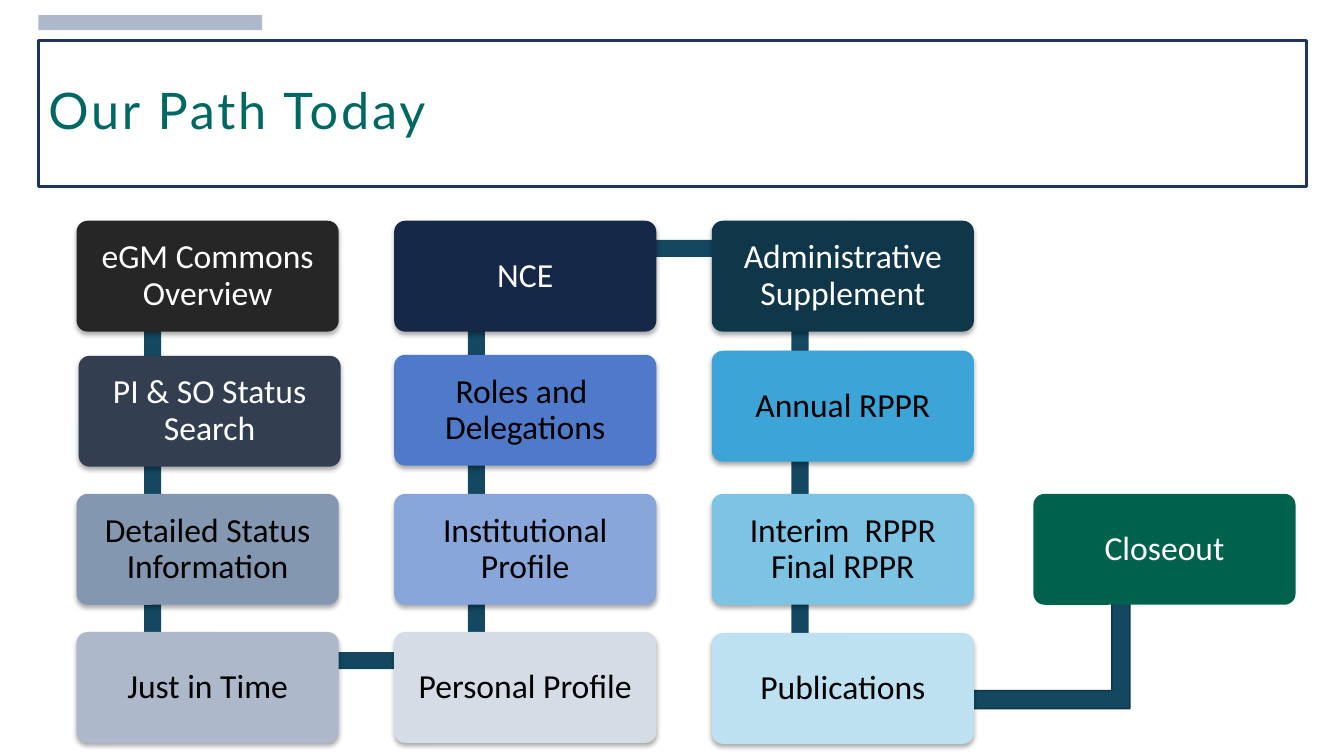
"""Build the "Our Path Today" slide: a stepped route through grant topics."""
from dataclasses import dataclass

from lxml import etree
from pptx import Presentation
from pptx import util as u
from pptx.dml.color import RGBColor
from pptx.enum import shapes, text
from pptx.oxml.ns import qn


@dataclass(frozen=True)
class Theme:
    title_font: str = "Lato"
    step_font: str = "Calibri"
    title_size: int = 36
    step_size: int = 24
    title_text: str = "006863"
    title_border: str = "1D3560"
    accent: str = "ADB9CA"
    route: str = "144861"
    route_edge: str = "0F3548"
    light: str = "FFFFFF"
    dark: str = "000000"


@dataclass(frozen=True)
class Box:
    left: float
    top: float
    width: float
    height: float

    def lengths(self) -> list[u.Length]:
        return [u.Inches(v) for v in (self.left, self.top, self.width, self.height)]


@dataclass(frozen=True)
class Step:
    lines: tuple[str, ...]
    left: float
    top: float
    fill: str
    ink: str
    raised: bool = True


THEME = Theme()
STEP_WIDTH, STEP_HEIGHT, STEP_INSET = 2.6, 1.1, 0.13
BAR = 0.17
COLUMNS = (0.76, 3.91, 7.06, 10.25)
ROWS = (2.19, 3.52, 4.9, 6.27)

STEPS = (
    Step(("eGM Commons Overview",), COLUMNS[0], ROWS[0], "262626", THEME.light),
    Step(("PI & SO Status Search",), 0.78, 3.53, "333F50", THEME.light),
    Step(("Detailed Status Information",), COLUMNS[0], ROWS[2], "8497B0", THEME.dark),
    Step(("Just in Time",), COLUMNS[0], ROWS[3], "ADB9CA", THEME.dark),
    Step(("Personal Profile",), COLUMNS[1], ROWS[3], "D6DCE5", THEME.dark),
    Step(("Institutional Profile",), COLUMNS[1], ROWS[2], "89A6DB", THEME.dark),
    Step(("Roles and ", "Delegations"), COLUMNS[1], ROWS[1], "4E7AC9", THEME.dark),
    Step(("NCE",), COLUMNS[1], ROWS[0], "162848", THEME.light),
    Step(("Administrative Supplement",), COLUMNS[2], ROWS[0], "0F3649", THEME.light),
    Step(("Annual RPPR",), COLUMNS[2], 3.48, "3CA4D7", THEME.dark),
    Step(("Interim  RPPR Final RPPR",), COLUMNS[2], ROWS[2], "7DC3E4", THEME.dark),
    Step(("Publications",), COLUMNS[2], 6.28, "BEE1F2", THEME.dark),
    Step(("Closeout",), COLUMNS[3], ROWS[2], "00624C", THEME.light, raised=False),
)

UPRIGHTS = tuple(
    Box(1.43 + 3.21 * column, top, BAR, height)
    for column in range(3)
    for top, height in ((2.46, 1.33), (3.8, 1.37), (5.18, 1.37))
)
CROSSINGS = (Box(1.52, 6.47, 3.2, BAR), Box(4.73, 2.38, 3.2, BAR))


def colour(value: str) -> RGBColor:
    return RGBColor.from_string(value)


def add_solid(slide, preset, box: Box, fill: str):
    solid = slide.shapes.add_shape(preset, *box.lengths())
    solid.shadow.inherit = False
    solid.fill.solid()
    solid.fill.fore_color.rgb = colour(fill)
    solid.line.fill.background()
    return solid


def add_run(paragraph, words: str, font: str, size: int, ink: str):
    run = paragraph.add_run()
    run.text = words
    run.font.name = font
    run.font.size = u.Pt(size)
    run.font.color.rgb = colour(ink)
    return run


def raise_card(card) -> None:
    effects = card._element.spPr.find(qn("a:effectLst"))
    shadow = etree.SubElement(
        effects, qn("a:outerShdw"), blurRad=str(u.Pt(3.5)), dist=str(u.Pt(2.2)),
        dir="5400000", algn="ctr", rotWithShape="0")
    tint = etree.SubElement(shadow, qn("a:srgbClr"), val=THEME.dark)
    etree.SubElement(tint, qn("a:alpha"), val="32000")


def add_step(slide, step: Step) -> None:
    box = Box(step.left, step.top, STEP_WIDTH, STEP_HEIGHT)
    card = add_solid(slide, shapes.MSO_SHAPE.ROUNDED_RECTANGLE, box, step.fill)
    card.adjustments[0] = 0.1
    if step.raised:
        raise_card(card)
    frame = card.text_frame
    frame.word_wrap = True
    frame.vertical_anchor = text.MSO_ANCHOR.MIDDLE
    frame.margin_left = frame.margin_right = u.Inches(STEP_INSET)
    frame.margin_top = frame.margin_bottom = u.Inches(STEP_INSET)
    label = frame.paragraphs[0]
    label.alignment = text.PP_ALIGN.CENTER
    label.line_spacing = 0.9
    for index, line in enumerate(step.lines):
        if index:
            label.add_line_break()
        add_run(label, line, THEME.step_font, THEME.step_size, step.ink)


def add_title(slide) -> None:
    title = slide.shapes.title
    title.left, title.top, title.width, title.height = Box(0.38, 0.4, 12.58, 1.45).lengths()
    title.line.color.rgb = colour(THEME.title_border)
    title.line.width = u.Pt(2)
    title.text_frame.vertical_anchor = text.MSO_ANCHOR.MIDDLE
    heading = title.text_frame.paragraphs[0]
    heading.alignment = text.PP_ALIGN.LEFT
    heading.line_spacing = 0.9
    run = add_run(heading, "Our Path Today", THEME.title_font, THEME.title_size,
                  THEME.title_text)
    run.font._element.set("spc", "200")


def add_route(slide) -> None:
    turn = add_solid(slide, shapes.MSO_SHAPE.BENT_UP_ARROW,
                     Box(9.08, 5.61, 2.33, 1.42), THEME.route)
    for index, value in enumerate((0.126, 0.206, 0.25)):
        turn.adjustments[index] = value
    turn.line.color.rgb = colour(THEME.route_edge)
    turn.line.width = u.Pt(1)
    for bar in UPRIGHTS + CROSSINGS:
        add_solid(slide, shapes.MSO_SHAPE.RECTANGLE, bar, THEME.route)


def main() -> None:
    deck = Presentation()
    deck.slide_width, deck.slide_height = u.Inches(13.33), u.Inches(7.5)
    slide = deck.slides.add_slide(deck.slide_layouts[5])
    add_solid(slide, shapes.MSO_SHAPE.RECTANGLE, Box(0.38, 0.15, 2.22, 0.15), THEME.accent)
    add_title(slide)
    add_route(slide)
    for step in STEPS:
        add_step(slide, step)
    deck.save("out.pptx")


if __name__ == "__main__":
    main()
